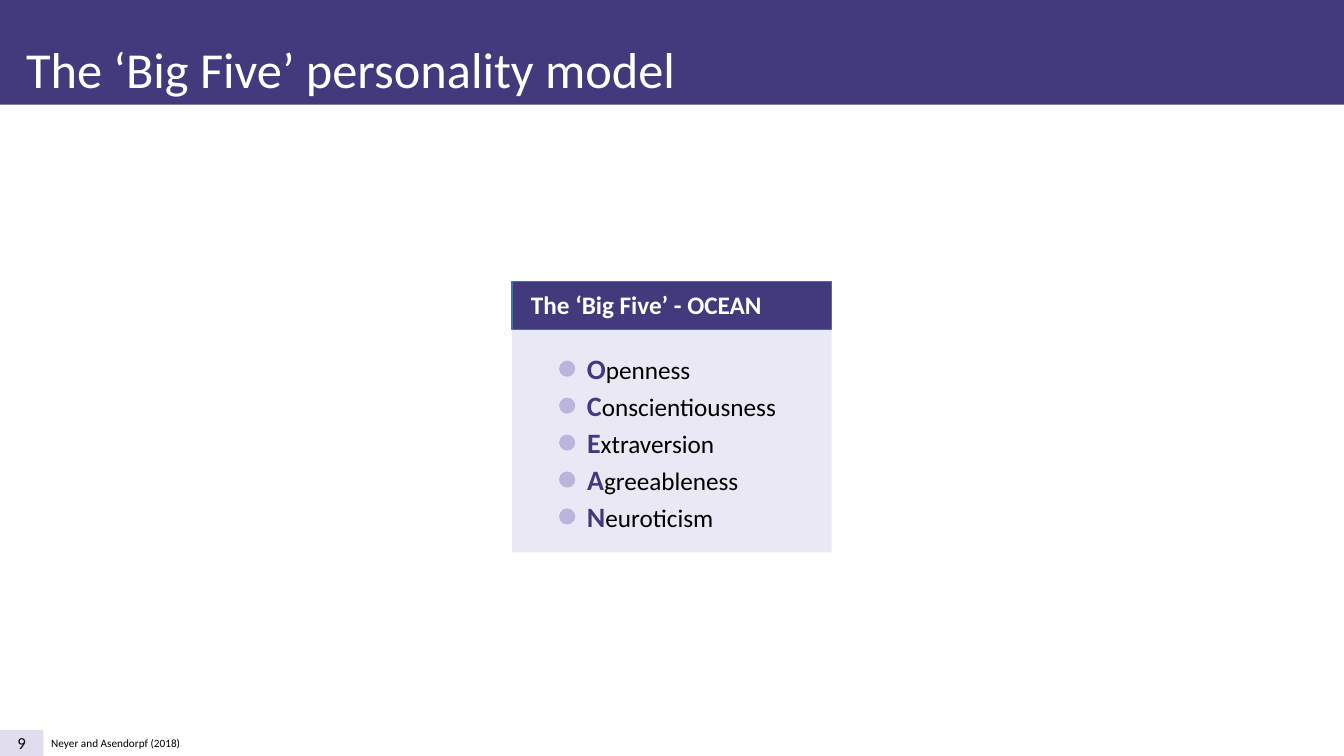
from pptx import Presentation
from pptx.dml.color import RGBColor
from pptx.enum.shapes import MSO_SHAPE
from pptx.enum.text import MSO_ANCHOR, MSO_AUTO_SIZE, PP_ALIGN
from pptx.util import Pt

RECTANGLE = MSO_SHAPE.RECTANGLE
OVAL = MSO_SHAPE.OVAL
MIDDLE = MSO_ANCHOR.MIDDLE
CENTER = PP_ALIGN.CENTER
FIT_TEXT = MSO_AUTO_SIZE.SHAPE_TO_FIT_TEXT

PURPLE = RGBColor(0x41, 0x3A, 0x7D)
LILAC = RGBColor(0xE9, 0xE8, 0xF4)
DOT_LILAC = RGBColor(0xB9, 0xB5, 0xDD)
NUMBER_LILAC = RGBColor(0xE2, 0xDC, 0xEE)
BORDER_BLUE = RGBColor(0x43, 0x73, 0x9E)
WHITE = RGBColor(0xFF, 0xFF, 0xFF)
BLACK = RGBColor(0, 0, 0)

FONT = "Calibri"
SLIDE_WIDTH, SLIDE_HEIGHT = 960, 540
CARD_LEFT, CARD_TOP, CARD_WIDTH = 365.8, 200.9, 228.2
TRAIT_TOP, TRAIT_STEP = 247.7, 26.4
DOT_SIZE, DOT_DROP = 11.5, 9.9

# Each trait: initial, rest of the word, width of its label
TRAITS = [
    ("O", "penness", 89.3),
    ("C", "onscientiousness", 151.2),
    ("E", "xtraversion", 106.6),
    ("A", "greeableness", 123.8),
    ("N", "euroticism", 105.8),
]


def add_block(shapes, preset, left, top, width, height, fill, border=None):
    block = shapes.add_shape(preset, Pt(left), Pt(top), Pt(width), Pt(height))
    block.shadow.inherit = False
    block.fill.solid()
    block.fill.fore_color.rgb = fill
    if border is None:
        block.line.fill.background()
    else:
        block.line.color.rgb = border
        block.line.width = Pt(1)
    return block


def add_run(paragraph, text, size, color, bold=False):
    run = paragraph.add_run()
    run.text = text
    run.font.name = FONT
    run.font.size = Pt(size)
    run.font.bold = bold
    run.font.color.rgb = color


def add_label(shapes, left, top, width, height, *runs):
    label = shapes.add_textbox(Pt(left), Pt(top), Pt(width), Pt(height))
    frame = label.text_frame
    frame.word_wrap = False
    frame.auto_size = FIT_TEXT
    for run in runs:
        add_run(frame.paragraphs[0], *run)


def add_page_number(shapes, number):
    page_box = add_block(shapes, RECTANGLE, 0, 521.3, 31, 18.7, NUMBER_LILAC)
    frame = page_box.text_frame
    frame.vertical_anchor = MIDDLE
    frame.paragraphs[0].alignment = CENTER
    add_run(frame.paragraphs[0], number, 12, BLACK)


def add_trait(shapes, row, initial, rest, width):
    top = TRAIT_TOP + row * TRAIT_STEP
    add_label(shapes, 412.2, top, width, 31.5,
              (initial, 20, PURPLE, True), (rest, 18, BLACK))
    add_block(shapes, OVAL, 399.4, top + DOT_DROP, DOT_SIZE, DOT_SIZE, DOT_LILAC)


def add_ocean_card(slide):
    card = slide.shapes.add_group_shape().shapes
    add_block(card, RECTANGLE, CARD_LEFT, CARD_TOP, CARD_WIDTH, 193.7, LILAC)
    add_block(card, RECTANGLE, CARD_LEFT, CARD_TOP, CARD_WIDTH, 34.6,
              PURPLE, BORDER_BLUE)
    add_label(card, 372.2, 203.2, 180.7, 29.1,
              ("The ‘Big Five’ - OCEAN", 18, WHITE, True))
    for row, trait in enumerate(TRAITS):
        add_trait(card, row, *trait)


def main():
    deck = Presentation()
    deck.slide_width, deck.slide_height = Pt(SLIDE_WIDTH), Pt(SLIDE_HEIGHT)
    slide = deck.slides.add_slide(deck.slide_layouts[6])

    # Page number and title band
    add_page_number(slide.shapes, "9")
    add_block(slide.shapes, RECTANGLE, 0, -0.7, SLIDE_WIDTH, 75.5, PURPLE)
    add_label(slide.shapes, 11.5, 23.8, 491, 50.9,
              ("The ‘Big Five’ personality model", 36, WHITE))

    # Card with the five traits
    add_ocean_card(slide)

    # Source reference
    add_label(slide.shapes, 29.5, 522.6, 109.4, 17,
              ("Neyer and Asendorpf (2018)", 8, BLACK))

    deck.save("out.pptx")


if __name__ == "__main__":
    main()
